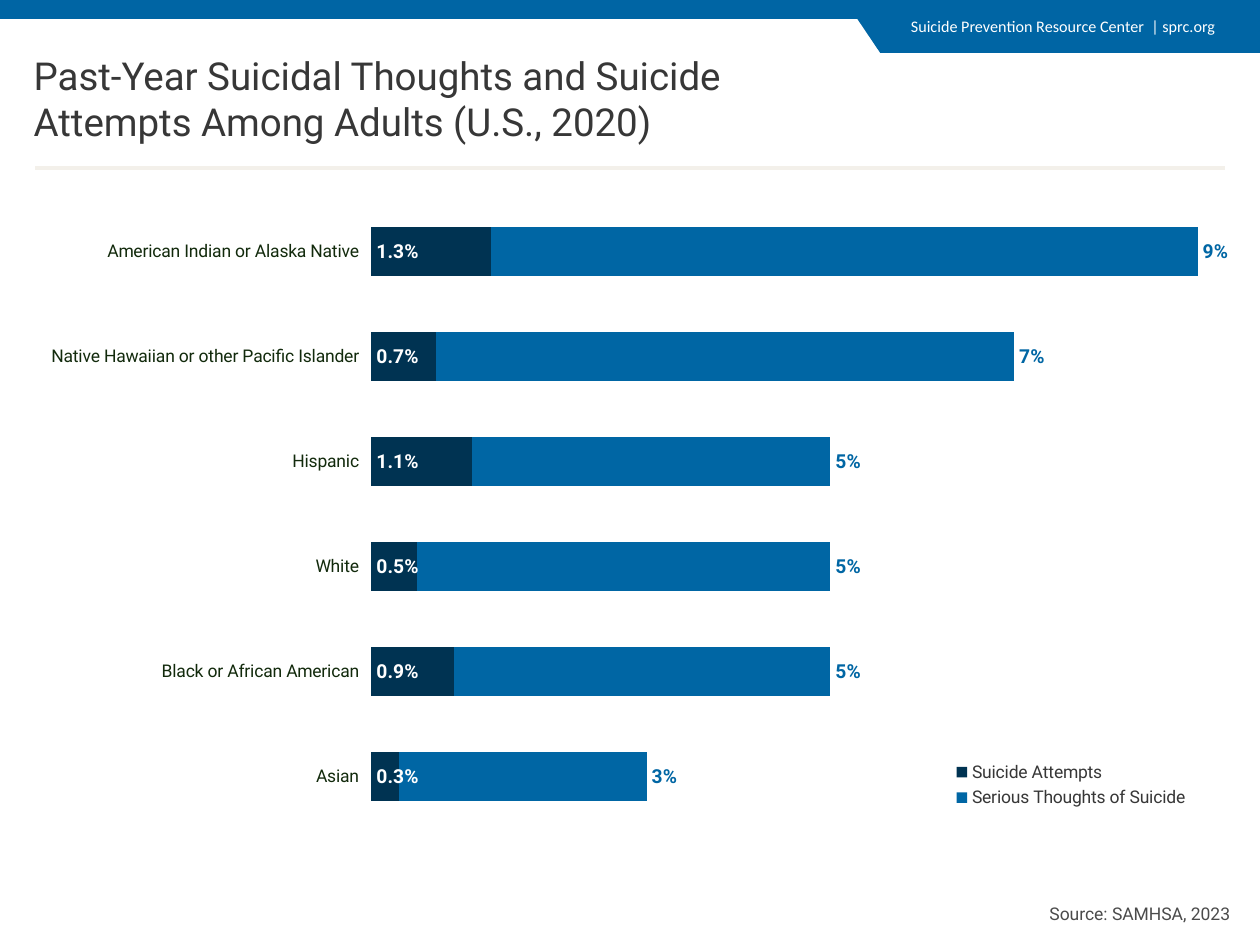
from lxml import etree
from pptx import Presentation
from pptx.chart.data import CategoryChartData
from pptx.dml.color import RGBColor
from pptx.enum.chart import XL_CHART_TYPE, XL_LABEL_POSITION, XL_LEGEND_POSITION, XL_TICK_LABEL_POSITION, XL_TICK_MARK
from pptx.enum.shapes import MSO_CONNECTOR, MSO_SHAPE
from pptx.enum.text import PP_ALIGN
from pptx.oxml import parse_xml
from pptx.oxml.ns import nsdecls, qn
from pptx.util import Pt

HEADER_BLUE = RGBColor(0x00, 0x65, 0xA4)
THOUGHTS_BLUE = RGBColor(0x00, 0x66, 0xA4)
ATTEMPTS_NAVY = RGBColor(0x00, 0x33, 0x52)
WHITE = RGBColor(0xFF, 0xFF, 0xFF)
TITLE_GRAY = RGBColor(0x37, 0x37, 0x37)
SOURCE_GRAY = RGBColor(0x4B, 0x4B, 0x4B)
CATEGORY_GREEN = RGBColor(0x12, 0x2A, 0x0C)
RULE_CREAM = RGBColor(0xF3, 0xF0, 0xEA)

GROUPS = [
    "American Indian or Alaska Native",
    "Native Hawaiian or other Pacific Islander",
    "Hispanic",
    "White",
    "Black or African American",
    "Asian",
]
SERIES = [
    ("Serious Thoughts of Suicide", [0.09, 0.07, 0.05, 0.05, 0.05, 0.03], "0%",
     THOUGHTS_BLUE, THOUGHTS_BLUE, XL_LABEL_POSITION.OUTSIDE_END),
    ("Suicide Attempts", [0.013, 0.007, 0.011, 0.005, 0.009, 0.003], "0.0%",
     ATTEMPTS_NAVY, WHITE, XL_LABEL_POSITION.INSIDE_BASE),
]


def style_font(font, size, color, name="Roboto", bold=False):
    font.size = Pt(size)
    font.color.rgb = color
    font.name = name
    font.bold = bold


def add_text(slide, text, box, align=PP_ALIGN.LEFT, **style):
    frame = slide.shapes.add_textbox(*map(Pt, box)).text_frame
    frame.word_wrap = True
    paragraph = frame.paragraphs[0]
    paragraph.alignment = align
    run = paragraph.add_run()
    run.text = text
    style_font(run.font, **style)


def fill_plain(shape, color):
    shape.shadow.inherit = False
    shape.fill.solid()
    shape.fill.fore_color.rgb = color
    shape.line.fill.background()


def add_header(slide, left, top, width, height):
    band = slide.shapes.add_shape(MSO_SHAPE.RECTANGLE, Pt(left), Pt(top), Pt(width), Pt(10.8))
    fill_plain(band, HEADER_BLUE)
    right, bottom = left + width, top + height
    tab_top = top + 7.2
    corners = [(right, tab_top), (right, bottom), (right - 217, bottom), (right - 232.5, tab_top)]
    points = [(Pt(x), Pt(y)) for x, y in corners]
    builder = slide.shapes.build_freeform(*points[0])
    builder.add_line_segments(points[1:], close=True)
    fill_plain(builder.convert_to_shape(), HEADER_BLUE)
    add_text(slide, "Suicide Prevention Resource Center  | sprc.org",
             (right - 206.6, top + 5.8, 212.4, 29.5), size=9.2, color=WHITE, name="Calibri")


def add_title(slide, left, top, width, height):
    add_text(slide, "Past-Year Suicidal Thoughts and Suicide Attempts Among Adults (U.S., 2020)",
             (left, top, 491.8, height - 5), size=22, color=TITLE_GRAY)
    bottom = Pt(top + height - 10)
    rule = slide.shapes.add_connector(MSO_CONNECTOR.STRAIGHT, Pt(left + 8), bottom, Pt(left + width), bottom)
    rule.line.color.rgb = RULE_CREAM
    rule.line.width = Pt(2.25)
    etree.SubElement(rule._element.spPr, qn("a:effectLst"))


def manual_layout(x, y, width, height, inner=False):
    target = '<c:layoutTarget val="inner"/>' if inner else ""
    return parse_xml(
        f'<c:layout {nsdecls("c")}><c:manualLayout>{target}'
        '<c:xMode val="edge"/><c:yMode val="edge"/>'
        f'<c:x val="{x}"/><c:y val="{y}"/><c:w val="{width}"/><c:h val="{height}"/>'
        '</c:manualLayout></c:layout>')


def place(element, layout, predecessor=None):
    for old in element.findall(qn("c:layout")):
        element.remove(old)
    if predecessor is None:
        element.insert(0, layout)
    else:
        element.find(qn(predecessor)).addnext(layout)


def format_axes(chart):
    groups = chart.category_axis
    groups.reverse_order = True
    groups.major_tick_mark = XL_TICK_MARK.NONE
    groups.tick_label_position = XL_TICK_LABEL_POSITION.LOW
    groups.format.line.fill.background()
    style_font(groups.tick_labels.font, 10, CATEGORY_GREEN)
    rates = chart.value_axis
    rates.minimum_scale, rates.maximum_scale = 0, 0.095
    rates.has_major_gridlines = False
    rates.visible = False


def add_rates_chart(slide, left, top, width, height):
    data = CategoryChartData()
    data.categories = GROUPS
    for name, values, number_format, *_ in SERIES:
        data.add_series(name, values, number_format)
    chart = slide.shapes.add_chart(XL_CHART_TYPE.BAR_CLUSTERED, Pt(left), Pt(top),
                                   Pt(width), Pt(height), data).chart
    chart.has_title = False
    style_font(chart.font, 10, TITLE_GRAY, "Cabin")
    format_axes(chart)
    plot = chart.plots[0]
    plot.gap_width, plot.overlap = 113, 100
    plot.vary_by_categories = False
    for series, (_, _, number_format, color, label_color, position) in zip(plot.series, SERIES):
        series.format.fill.solid()
        series.format.fill.fore_color.rgb = color
        labels = series.data_labels
        labels.show_value = True
        labels.number_format = number_format
        labels.number_format_is_linked = False
        labels.position = position
        style_font(labels.font, 11, label_color, bold=True)
    chart.has_legend = True
    legend = chart.legend
    legend.position = XL_LEGEND_POSITION.BOTTOM
    legend.include_in_layout = True
    style_font(legend.font, 10, TITLE_GRAY)
    place(legend._element, manual_layout(0.757, 0.885, 0.2, 0.09), "c:legendPos")
    place(chart._chartSpace.chart.plotArea, manual_layout(0.278, 0, 0.722, 1, inner=True))


def add_source(slide, left, top, width, height):
    add_text(slide, "Source: SAMHSA, 2023", (left, top, width, height),
             align=PP_ALIGN.RIGHT, size=10, color=SOURCE_GRAY)


def main():
    presentation = Presentation()
    presentation.slide_width, presentation.slide_height = Pt(720), Pt(540)
    slide = presentation.slides.add_slide(presentation.slide_layouts[6])
    add_header(slide, 0, 0, 720, 30.2)
    add_title(slide, 12.2, 26, 687.7, 80)
    add_rates_chart(slide, 20.2, 113.8, 690.5, 360)
    add_source(slide, 586, 512.6, 123.9, 19.4)
    presentation.save("out.pptx")


if __name__ == "__main__":
    main()
